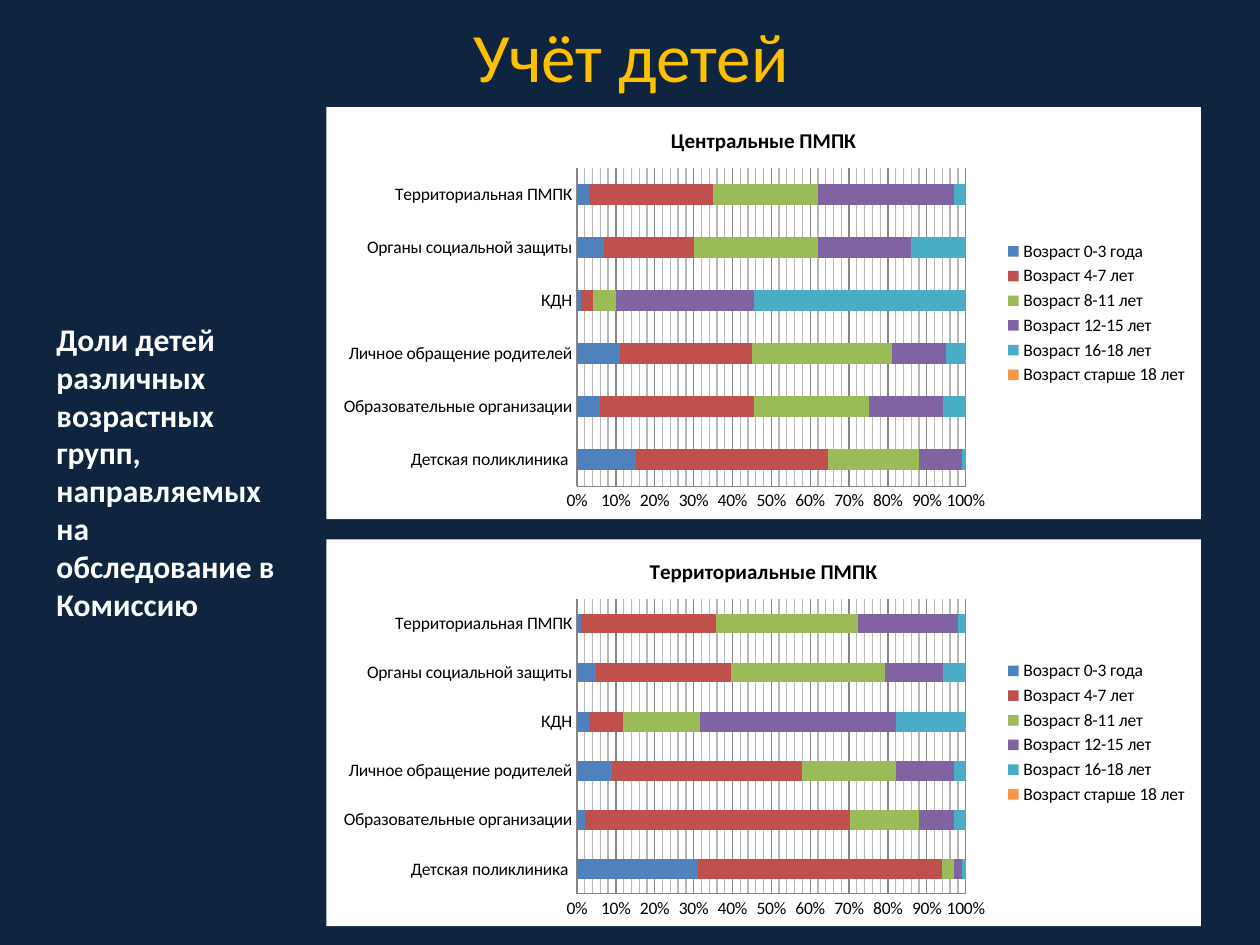
from copy import deepcopy

from lxml.etree import fromstring
from pptx import Presentation
from pptx.chart.data import CategoryChartData
from pptx.dml.color import RGBColor
from pptx.enum.chart import XL_CHART_TYPE, XL_LEGEND_POSITION, XL_TICK_MARK
from pptx.enum.text import MSO_ANCHOR, MSO_AUTO_SIZE, PP_ALIGN
from pptx.oxml.ns import qn
from pptx.util import Inches, Pt

NAVY = RGBColor(0x0F, 0x24, 0x3E)
GOLD = RGBColor(0xFF, 0xC0, 0x00)
WHITE = RGBColor(0xFF, 0xFF, 0xFF)
BLACK = RGBColor(0x00, 0x00, 0x00)
GRAY = RGBColor(0x86, 0x86, 0x86)
LIGHT_GRAY = RGBColor(0xB7, 0xB7, 0xB7)
FONT = "Calibri"
CHART_LEFT, CHART_WIDTH = Inches(2.59), Inches(6.94)
CHART_FILL = (
    '<c:spPr xmlns:c="http://schemas.openxmlformats.org/drawingml/2006/chart" '
    'xmlns:a="http://schemas.openxmlformats.org/drawingml/2006/main">'
    f'<a:solidFill><a:srgbClr val="{WHITE}"/></a:solidFill>'
    "<a:ln><a:noFill/></a:ln></c:spPr>"
)

SOURCES = [
    "Детская поликлиника ",
    "Образовательные организации",
    "Личное обращение родителей",
    "КДН",
    "Органы социальной защиты",
    "Территориальная ПМПК",
]
AGES = [
    ("Возраст 0-3 года", RGBColor(0x4F, 0x81, 0xBD)),
    ("Возраст 4-7 лет", RGBColor(0xC0, 0x50, 0x4D)),
    ("Возраст 8-11 лет", RGBColor(0x9B, 0xBB, 0x59)),
    ("Возраст 12-15 лет", RGBColor(0x80, 0x64, 0xA2)),
    ("Возраст 16-18 лет", RGBColor(0x4B, 0xAC, 0xC6)),
    ("Возраст старше 18 лет", RGBColor(0xF7, 0x96, 0x46)),
]
CHARTS = [
    ("Территориальные ПМПК", 4.28, 3.07, [
        (31, 2, 9, 3, 5, 1),
        (63, 69, 49, 9, 35, 35),
        (3, 18, 24, 20, 40, 37),
        (2, 9, 15, 51, 15, 26),
        (1, 3, 3, 18, 6, 2),
        (0, 0, 0, 0, 0, 0),
    ]),
    ("Центральные ПМПК", 0.85, 3.27, [
        (15, 6, 11, 1, 7, 3),
        (49, 40, 34, 3, 23, 32),
        (23, 30, 36, 6, 32, 27),
        (11, 19, 14, 35, 24, 35),
        (1, 6, 5, 54, 14, 3),
        (0, 0, 0, 0, 0, 0),
    ]),
]


def add_run(p, text, size, color, bold=False):
    r = p.add_run()
    r.text = text
    r.font.name = FONT
    r.font.size = Pt(size)
    r.font.bold = bold
    r.font.color.rgb = color


prs = Presentation()
prs.slide_width, prs.slide_height = Inches(10), Inches(7.5)
s = prs.slides.add_slide(prs.slide_layouts[5])
s.background.fill.solid()
s.background.fill.fore_color.rgb = NAVY

for title, top, height, rows in CHARTS:
    data = CategoryChartData()
    data.categories = SOURCES
    for (age, _), values in zip(AGES, rows):
        data.add_series(age, values)
    chart = s.shapes.add_chart(
        XL_CHART_TYPE.BAR_STACKED_100, CHART_LEFT, Inches(top),
        CHART_WIDTH, Inches(height), data).chart
    chart.font.name = FONT
    chart.font.size = Pt(10)
    chart.font.color.rgb = BLACK
    chart._chartSpace.chart.addnext(fromstring(CHART_FILL))

    chart.has_title = True
    add_run(chart.chart_title.text_frame.paragraphs[0], title, 12, BLACK, True)
    chart.chart_title.include_in_layout = False
    chart.has_legend = True
    chart.legend.position = XL_LEGEND_POSITION.RIGHT
    chart.legend.include_in_layout = False

    plot = chart.plots[0]
    plot.gap_width, plot.overlap = 150, 100
    plot.vary_by_categories = False
    for series, (_, color) in zip(plot.series, AGES):
        series.format.fill.solid()
        series.format.fill.fore_color.rgb = color

    for axis in (chart.category_axis, chart.value_axis):
        axis.major_tick_mark = axis.minor_tick_mark = XL_TICK_MARK.NONE
        axis.format.line.color.rgb = GRAY
    axis = chart.value_axis
    axis.minimum_scale, axis.maximum_scale = 0, 1
    axis.major_unit, axis.minor_unit = 0.1, 0.02
    axis.tick_labels.number_format = "0%"
    axis.tick_labels.number_format_is_linked = False
    axis.has_major_gridlines = axis.has_minor_gridlines = True
    grid_line = axis.major_gridlines.format.line
    grid_line.color.rgb = LIGHT_GRAY
    major, minor = (axis._element.find(qn(f"c:{name}Gridlines")) for name in ("major", "minor"))
    minor.append(deepcopy(major.find(qn("c:spPr"))))
    grid_line.color.rgb = GRAY

sp = s.shapes.add_textbox(Inches(0.35), Inches(2.49), Inches(1.97), Inches(2.52))
tf = sp.text_frame
tf.word_wrap = True
tf.auto_size = MSO_AUTO_SIZE.SHAPE_TO_FIT_TEXT
add_run(tf.paragraphs[0],
        "Доли детей различных возрастных групп, направляемых на обследование в Комиссию",
        18, WHITE, True)

sp = s.shapes.title
sp.left, sp.top, sp.width, sp.height = Inches(0.51), Inches(0.13), Inches(9), Inches(0.61)
tf = sp.text_frame
tf.auto_size = MSO_AUTO_SIZE.NONE
tf.vertical_anchor = MSO_ANCHOR.MIDDLE
p = tf.paragraphs[0]
p.alignment = PP_ALIGN.CENTER
add_run(p, "Учёт детей", 39.6, GOLD)

prs.save("out.pptx")
